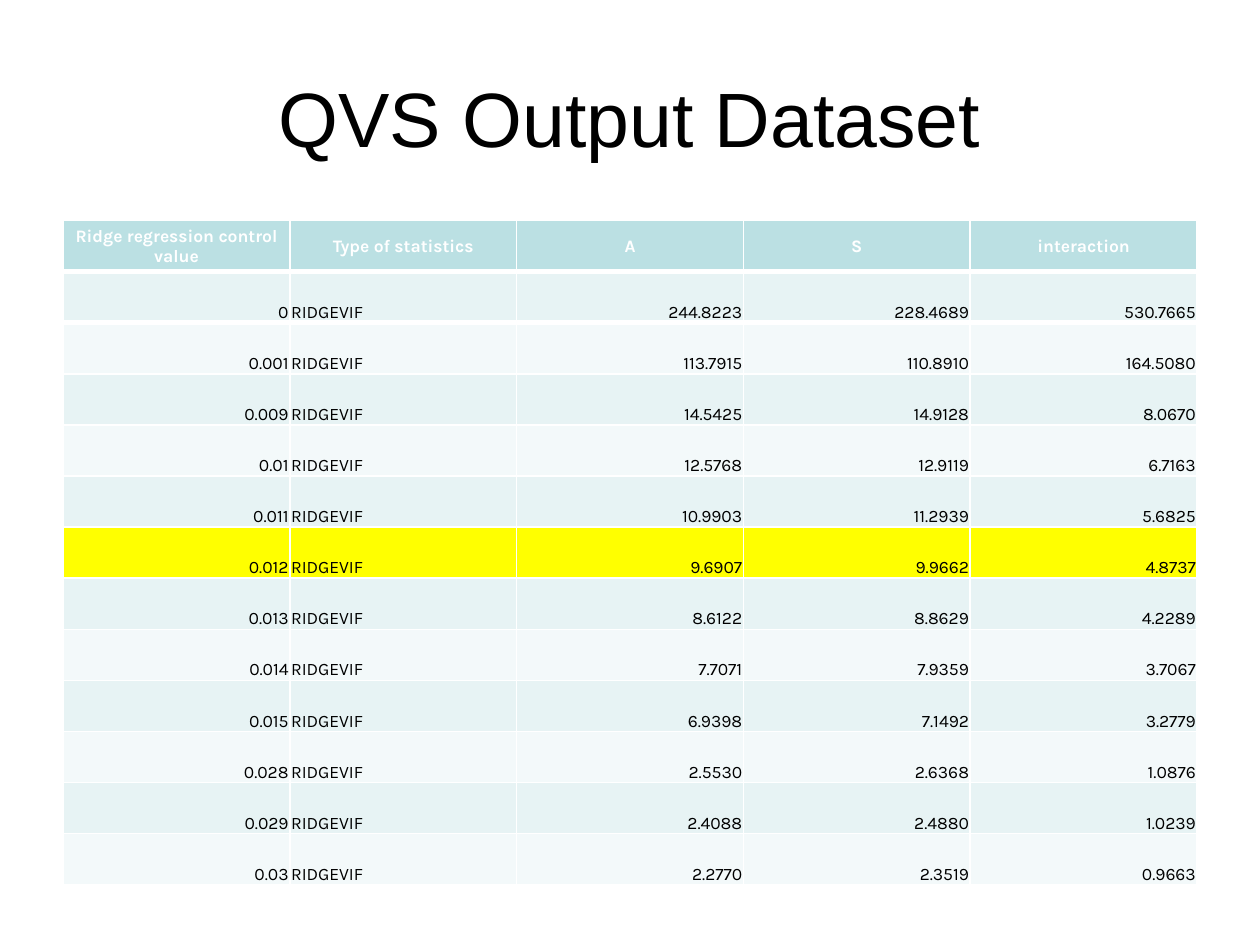
from lxml.etree import SubElement
from pptx import Presentation
from pptx.dml.color import RGBColor
from pptx.enum.text import MSO_ANCHOR as Anchor, PP_ALIGN as Align
from pptx.oxml.ns import qn
from pptx.util import Pt

COLORS = {
    "text": "000000",
    "header_text": "FFFFFF",
    "rule": "FFFFFF",
    "header": "BBE0E3",
    "odd": "E7F3F4",
    "even": "F3F9FA",
    "chosen": "FFFF00",
}
HEADINGS = ["Ridge regression control value", "Type of statistics", "A", "S", "interaction"]
STATISTIC = "RIDGEVIF"
CHOSEN_RIDGE = "0.012"
RIDGE_VIFS = [
    ("0", "244.8223", "228.4689", "530.7665"),
    ("0.001", "113.7915", "110.8910", "164.5080"),
    ("0.009", "14.5425", "14.9128", "8.0670"),
    ("0.01", "12.5768", "12.9119", "6.7163"),
    ("0.011", "10.9903", "11.2939", "5.6825"),
    ("0.012", "9.6907", "9.9662", "4.8737"),
    ("0.013", "8.6122", "8.8629", "4.2289"),
    ("0.014", "7.7071", "7.9359", "3.7067"),
    ("0.015", "6.9398", "7.1492", "3.2779"),
    ("0.028", "2.5530", "2.6368", "1.0876"),
    ("0.029", "2.4088", "2.4880", "1.0239"),
    ("0.03", "2.2770", "2.3519", "0.9663"),
]


def write(frame, text, font="Karla", size=10, color="text", bold=False, align=Align.RIGHT):
    paragraph = frame.paragraphs[0]
    paragraph.alignment = align
    run = paragraph.add_run()
    run.text = text
    run.font.name = font
    run.font.size = Pt(size)
    run.font.bold = bold
    run.font.color.rgb = RGBColor.from_string(COLORS[color])


def place_heading(slide, left, top, width, height):
    heading = slide.shapes.title
    heading.left, heading.top = Pt(left), Pt(top)
    heading.width, heading.height = Pt(width), Pt(height)
    heading.text_frame.vertical_anchor = Anchor.MIDDLE
    write(heading.text_frame, "QVS Output Dataset", font="Arial", size=44, align=Align.CENTER)


def fill_cell(cell, text, fill, anchor=Anchor.BOTTOM, **text_format):
    cell.fill.solid()
    cell.fill.fore_color.rgb = RGBColor.from_string(COLORS[fill])
    cell.vertical_anchor = anchor
    cell.margin_left = cell.margin_right = cell.margin_top = Pt(0.75)
    cell.margin_bottom = Pt(0)
    write(cell.text_frame, text, **text_format)


def rule_cell(cell, side, weight):
    properties = cell._tc.get_or_add_tcPr()
    rule = SubElement(properties, qn(f"a:{side}"), w=str(Pt(weight)))
    paint = SubElement(rule, qn("a:solidFill"))
    SubElement(paint, qn("a:srgbClr"), val=COLORS["rule"])
    properties.insert(0, rule)


def place_dataset(slide, left, top, width, height):
    row_count, column_count = len(RIDGE_VIFS) + 1, len(HEADINGS)
    dataset = slide.shapes.add_table(
        row_count, column_count, Pt(left), Pt(top), Pt(width), Pt(height)
    ).table
    for column in dataset.columns:
        column.width = Pt(width / column_count)
    for row in dataset.rows:
        row.height = Pt(height / row_count)

    for column, label in enumerate(HEADINGS):
        fill_cell(dataset.cell(0, column), label, "header", anchor=Anchor.MIDDLE,
                  color="header_text", bold=True, align=Align.CENTER)
        rule_cell(dataset.cell(0, column), "lnB", 3)
        rule_cell(dataset.cell(1, column), "lnT", 3)

    for row, (ridge, *vifs) in enumerate(RIDGE_VIFS, start=1):
        band = "odd" if row % 2 else "even"
        fill = "chosen" if ridge == CHOSEN_RIDGE else band
        for column, value in enumerate([ridge, STATISTIC, *vifs]):
            align = Align.LEFT if value == STATISTIC else Align.RIGHT
            fill_cell(dataset.cell(row, column), value, fill, align=align)


def main():
    deck = Presentation()
    deck.slide_width, deck.slide_height = Pt(720), Pt(540)
    slide = deck.slides.add_slide(deck.slide_layouts[5])
    place_heading(slide, 36, 21.6, 648, 90)
    place_dataset(slide, 36, 126, 648, 379.6)
    deck.save("out.pptx")


if __name__ == "__main__":
    main()
